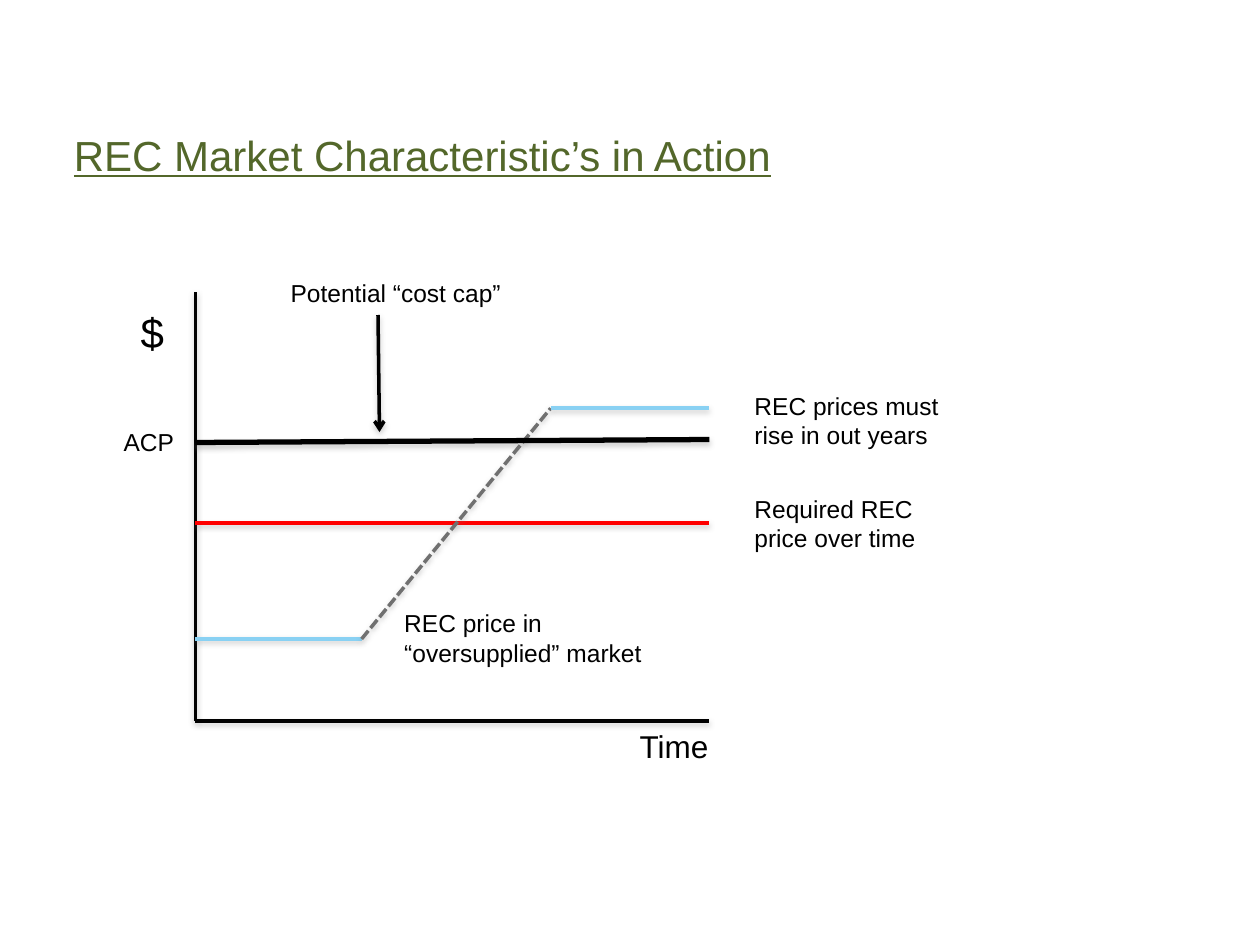
from lxml import etree
from pptx import Presentation
from pptx.dml.color import RGBColor
from pptx.enum.dml import MSO_LINE
from pptx.enum.shapes import MSO_CONNECTOR
from pptx.enum.text import MSO_ANCHOR, PP_ALIGN
from pptx.oxml import parse_xml
from pptx.oxml.ns import nsdecls, qn
from pptx.util import Cm, Pt

STRAIGHT = MSO_CONNECTOR.STRAIGHT
DASHED = MSO_LINE.SQUARE_DOT
TOP = MSO_ANCHOR.TOP
LEFT, CENTER, RIGHT = PP_ALIGN.LEFT, PP_ALIGN.CENTER, PP_ALIGN.RIGHT

BLACK = RGBColor(0x00, 0x00, 0x00)
GREEN = RGBColor(0x53, 0x67, 0x2A)
RED = RGBColor(0xFF, 0x00, 0x00)
BLUE = RGBColor(0x89, 0xD1, 0xF3)
GRAY = RGBColor(0x70, 0x70, 0x70)

AXIS_X, AXIS_TOP, AXIS_BOTTOM, PLOT_RIGHT = 3.94, 5.89, 14.53, 14.3
RISE_START, RISE_END = 7.29, 11.1
LOW_PRICE, HIGH_PRICE, REQUIRED_PRICE = 12.88, 8.23, 10.54
NOTE_LEFT, NOTE_WIDTH = 14.96, 4.85

SHADOW = (
    f'<a:effectLst {nsdecls("a")}>'
    '<a:outerShdw blurRad="40000" dist="20000" dir="5400000" rotWithShape="0">'
    '<a:srgbClr val="808080"><a:alpha val="38000"/></a:srgbClr>'
    '</a:outerShdw></a:effectLst>'
)


class SlideBuilder:
    font_name = "Arial"

    def __init__(self, slide):
        self.slide = slide

    def text(self, content, left, top, width, height, align=LEFT, **font_format):
        shape = self.slide.shapes.add_textbox(Cm(left), Cm(top), Cm(width), Cm(height))
        frame = shape.text_frame
        frame.word_wrap = True
        frame.vertical_anchor = TOP
        paragraph = frame.paragraphs[0]
        paragraph.alignment = align
        run = paragraph.add_run()
        run.text = content
        values = {"name": self.font_name, "size": Pt(14), **font_format}
        color = values.pop("color", BLACK)
        for attribute, value in values.items():
            setattr(run.font, attribute, value)
        run.font.color.rgb = color

    def line(self, start, end, color=BLACK, arrow=False, **line_format):
        points = [Cm(value) for value in (*start, *end)]
        connector = self.slide.shapes.add_connector(STRAIGHT, *points)
        connector.line.color.rgb = color
        for attribute, value in {"width": Pt(2), **line_format}.items():
            setattr(connector.line, attribute, value)
        properties = connector._element.spPr
        if arrow:
            outline = properties.find(qn("a:ln"))
            etree.SubElement(outline, qn("a:tailEnd"), type="arrow")
        properties.append(parse_xml(SHADOW))


def main():
    presentation = Presentation()
    presentation.slide_width = Cm(25.4)
    presentation.slide_height = Cm(19.05)
    builder = SlideBuilder(presentation.slides.add_slide(presentation.slide_layouts[6]))

    builder.text("REC Market Characteristic’s in Action", 1.24, 2.49, 19.74, 1.3,
                 size=Pt(24), color=GREEN, underline=True)

    builder.line((AXIS_X, AXIS_TOP), (AXIS_X, AXIS_BOTTOM))
    builder.line((AXIS_X, AXIS_BOTTOM), (PLOT_RIGHT, AXIS_BOTTOM))
    builder.text("$", 2.41, 6.05, 1.32, 1.3, CENTER, size=Pt(24))
    builder.text("Time", 12.17, AXIS_BOTTOM, 2.36, 1.02, RIGHT, size=Pt(18))

    builder.line((AXIS_X, REQUIRED_PRICE), (PLOT_RIGHT, REQUIRED_PRICE), RED)
    builder.text("Required REC price over time", NOTE_LEFT, 9.83, NOTE_WIDTH, 1.45)

    builder.line((AXIS_X, LOW_PRICE), (RISE_START, LOW_PRICE), BLUE)
    builder.text("REC price in “oversupplied” market", 7.9, 12.14, 5.44, 1.45)
    builder.line((RISE_START, LOW_PRICE), (RISE_END, HIGH_PRICE), GRAY, dash_style=DASHED)
    builder.line((RISE_END, HIGH_PRICE), (PLOT_RIGHT, HIGH_PRICE), BLUE)
    builder.text("REC prices must rise in out years", NOTE_LEFT, 7.75, NOTE_WIDTH, 1.45)

    builder.line((AXIS_X, 8.92), (PLOT_RIGHT, 8.86), width=Pt(3))
    builder.text("Potential “cost cap”", 5.61, 5.49, 5.49, 0.86)
    builder.line((7.62, 6.35), (7.65, 8.71), arrow=True)
    builder.text("ACP", 1.88, 8.48, 1.88, 0.86, RIGHT)

    presentation.save("out.pptx")


if __name__ == "__main__":
    main()
